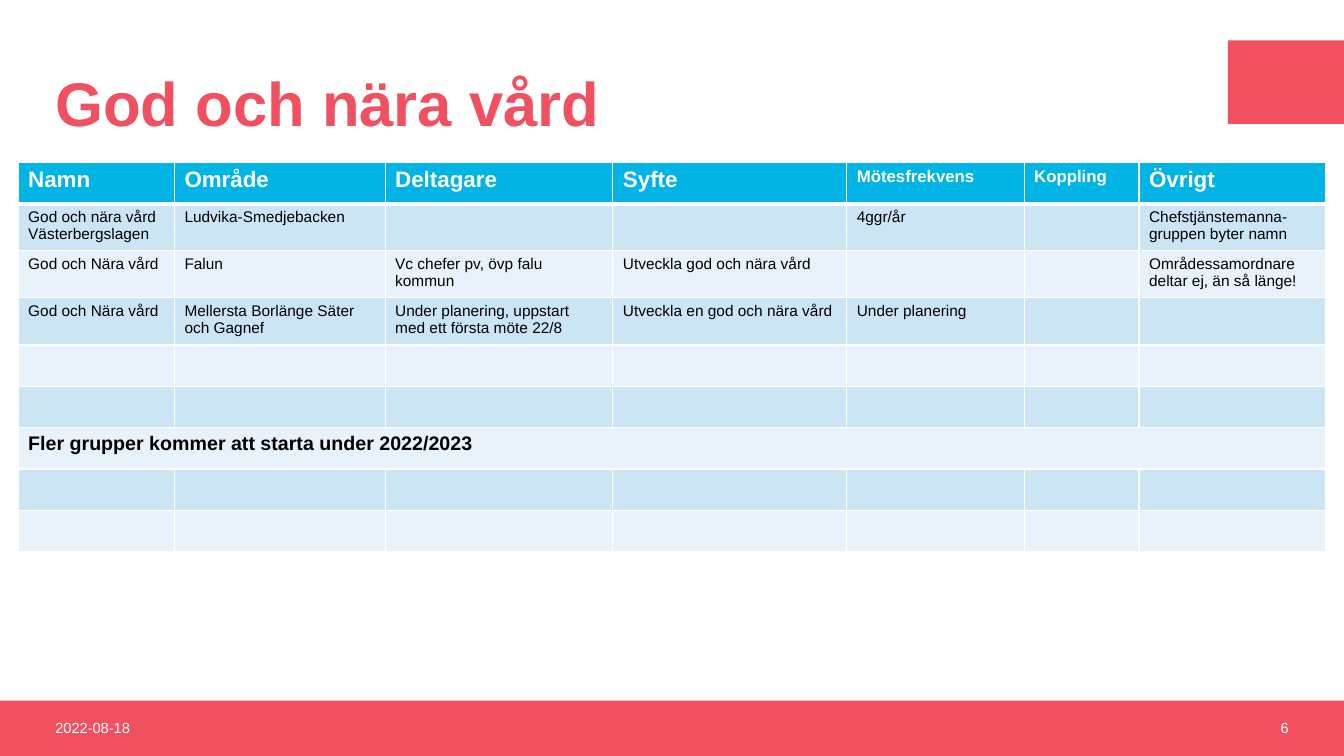
"""Build the slide with the table of care cooperation groups."""
from dataclasses import dataclass
from typing import Any

from lxml import etree
from pptx import Presentation
from pptx.dml.color import RGBColor
from pptx.enum.shapes import MSO_SHAPE
from pptx.enum.text import MSO_ANCHOR, MSO_AUTO_SIZE, PP_ALIGN
from pptx.oxml.ns import qn
from pptx.util import Inches, Pt

RECTANGLE = MSO_SHAPE.RECTANGLE
MIDDLE = MSO_ANCHOR.MIDDLE
NO_AUTOFIT = MSO_AUTO_SIZE.NONE
LEFT, RIGHT = PP_ALIGN.LEFT, PP_ALIGN.RIGHT

WHITE = RGBColor(0xFF, 0xFF, 0xFF)
BLACK = RGBColor(0x00, 0x00, 0x00)
CORAL = RGBColor(0xF1, 0x50, 0x60)
HEADER_BLUE = RGBColor(0x00, 0xB4, 0xE4)
BANDS = (RGBColor(0xE7, 0xF2, 0xFA), RGBColor(0xCC, 0xE5, 0xF5))

SLIDE_WIDTH, SLIDE_HEIGHT = Inches(13.33), Inches(7.5)
TITLE_ONLY_LAYOUT = 5


@dataclass(frozen=True)
class Area:
    """A rectangle in percent of the slide's width and height."""
    left: float
    top: float
    width: float
    height: float

    def box(self) -> tuple[int, int, int, int]:
        """Return left, top, width and height as lengths."""
        return (across(self.left), down(self.top),
                across(self.width), down(self.height))


@dataclass(frozen=True)
class FooterText:
    """A short text in the bottom band."""
    text: str
    area: Area
    alignment: Any


BLOCKS = (Area(0, 92.67, 100, 7.33), Area(91.37, 5.33, 8.63, 11.07))
TITLE_AREA = Area(3.38, 5.33, 87.1, 17.6)
FOOTERS = (
    FooterText("2022-08-18", Area(3.38, 92.67, 22.5, 7.2), LEFT),
    FooterText("6", Area(74.12, 92.67, 22.5, 7.2), RIGHT),
)

COLUMN_SHARES = (11.63, 15.68, 16.95, 17.4, 13.2, 8.55, 13.88)
ROW_SHARE = 5.47
MERGED_ROW = 6
PURPOSE_COLUMN = 3
SMALL_HEADINGS = ("Mötesfrekvens", "Koppling")
ROWS = (
    ("Namn", "Område", "Deltagare", "Syfte", "Mötesfrekvens", "Koppling", "Övrigt"),
    ("God och nära vård Västerbergslagen", "Ludvika-Smedjebacken", "", "",
     "4ggr/år", "", "Chefstjänstemanna-gruppen byter namn"),
    ("God och Nära vård", "Falun", "Vc chefer pv, övp falu kommun",
     "Utveckla god och nära vård", "", "",
     "Områdessamordnare deltar ej, än så länge!"),
    ("God och Nära vård", "Mellersta Borlänge Säter och Gagnef",
     "Under planering, uppstart med ett första möte 22/8",
     "Utveckla en god och nära vård", "Under planering", "", ""),
    ("",) * 7,
    ("",) * 7,
    ("Fler grupper kommer att starta under 2022/2023",) + ("",) * 6,
    ("",) * 7,
    ("",) * 7,
)
TABLE_AREA = Area(1.35, 21.47, sum(COLUMN_SHARES), ROW_SHARE * len(ROWS))


def across(share: float) -> int:
    """Turn a percentage of the slide's width into a length."""
    return round(SLIDE_WIDTH * share / 100)


def down(share: float) -> int:
    """Turn a percentage of the slide's height into a length."""
    return round(SLIDE_HEIGHT * share / 100)


def set_attributes(target: Any, values: dict[str, Any]) -> None:
    """Set every named attribute on the target."""
    for name, value in values.items():
        setattr(target, name, value)


def write(paragraph: Any, text: str, size: float, color: RGBColor,
          bold: bool = False) -> None:
    """Put formatted text in a paragraph."""
    paragraph.text = text
    set_attributes(paragraph.font, {"name": "Arial", "size": Pt(size), "bold": bold})
    paragraph.font.color.rgb = color


def add_block(slide: Any, area: Area) -> None:
    """Draw a plain coral rectangle."""
    shape = slide.shapes.add_shape(RECTANGLE, *area.box())
    shape.shadow.inherit = False
    shape.fill.solid()
    shape.fill.fore_color.rgb = CORAL
    shape.line.fill.background()


def fill_title(slide: Any) -> None:
    """Place and write the slide title."""
    title = slide.shapes.title
    set_attributes(title, dict(zip(("left", "top", "width", "height"),
                                   TITLE_AREA.box())))
    set_attributes(title.text_frame, {"vertical_anchor": MIDDLE,
                                      "auto_size": NO_AUTOFIT, "word_wrap": True})
    paragraph = title.text_frame.paragraphs[0]
    write(paragraph, "God och nära vård", 44, CORAL, True)
    set_attributes(paragraph, {"alignment": LEFT, "line_spacing": 0.9})


def add_footer(slide: Any, footer: FooterText) -> None:
    """Write one text in the bottom band."""
    frame = slide.shapes.add_textbox(*footer.area.box()).text_frame
    set_attributes(frame, {"word_wrap": True, "vertical_anchor": MIDDLE})
    write(frame.paragraphs[0], footer.text, 10.5, WHITE)
    frame.paragraphs[0].alignment = footer.alignment


def add_borders(cell: Any, row: int) -> None:
    """Give a cell white borders, thicker below the header row."""
    widths = {"a:lnL": 1, "a:lnR": 1, "a:lnT": 3 if row == 1 else 1,
              "a:lnB": 3 if row == 0 else 1}
    properties = cell._tc.get_or_add_tcPr()
    for tag, width in widths.items():
        line = etree.SubElement(properties, qn(tag), w=str(Pt(width)))
        fill = etree.SubElement(line, qn("a:solidFill"))
        etree.SubElement(fill, qn("a:srgbClr"), val=str(WHITE))


def format_cell(cell: Any, row: int, column: int, text: str) -> None:
    """Write, border and fill one table cell."""
    add_borders(cell, row)
    cell.fill.solid()
    cell.fill.fore_color.rgb = BANDS[row % 2] if row else HEADER_BLUE
    paragraph = cell.text_frame.paragraphs[0]
    if row == 0:
        write(paragraph, text, 12 if text in SMALL_HEADINGS else 16, WHITE, True)
    elif row == MERGED_ROW:
        write(paragraph, text, 14, BLACK, True)
    else:
        write(paragraph, text, 11, BLACK)
        if text and column == PURPOSE_COLUMN:
            paragraph.space_after = Pt(6)


def add_group_table(slide: Any) -> None:
    """Draw the table of groups."""
    table = slide.shapes.add_table(len(ROWS), len(COLUMN_SHARES),
                                   *TABLE_AREA.box()).table
    for column, share in zip(table.columns, COLUMN_SHARES):
        column.width = across(share)
    for row_index, texts in enumerate(ROWS):
        table.rows[row_index].height = down(ROW_SHARE)
        for column_index, text in enumerate(texts):
            format_cell(table.cell(row_index, column_index),
                        row_index, column_index, text)
    last_column = len(COLUMN_SHARES) - 1
    table.cell(MERGED_ROW, 0).merge(table.cell(MERGED_ROW, last_column))


def main() -> None:
    """Build and save the presentation."""
    presentation = Presentation()
    set_attributes(presentation, {"slide_width": SLIDE_WIDTH,
                                  "slide_height": SLIDE_HEIGHT})
    slide = presentation.slides.add_slide(
        presentation.slide_layouts[TITLE_ONLY_LAYOUT])
    for area in BLOCKS:
        add_block(slide, area)
    fill_title(slide)
    for footer in FOOTERS:
        add_footer(slide, footer)
    add_group_table(slide)
    presentation.save("out.pptx")


if __name__ == "__main__":
    main()
